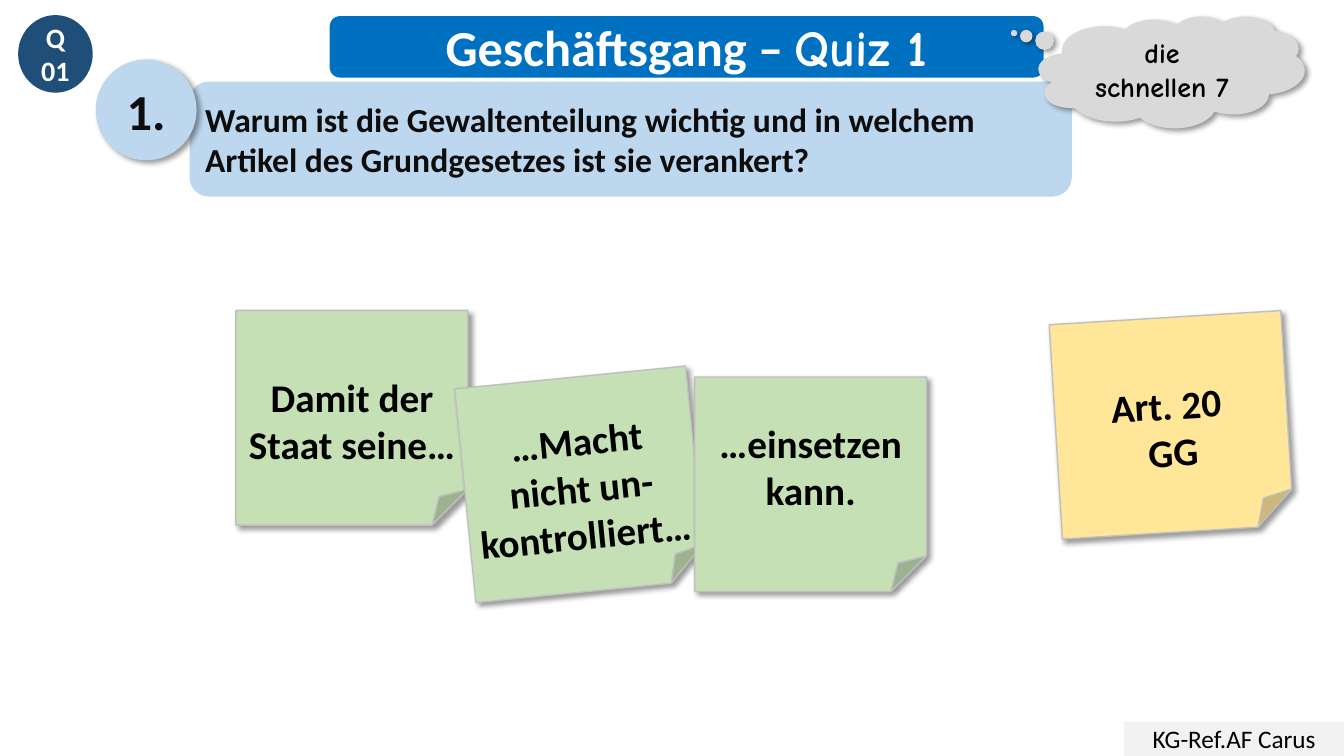
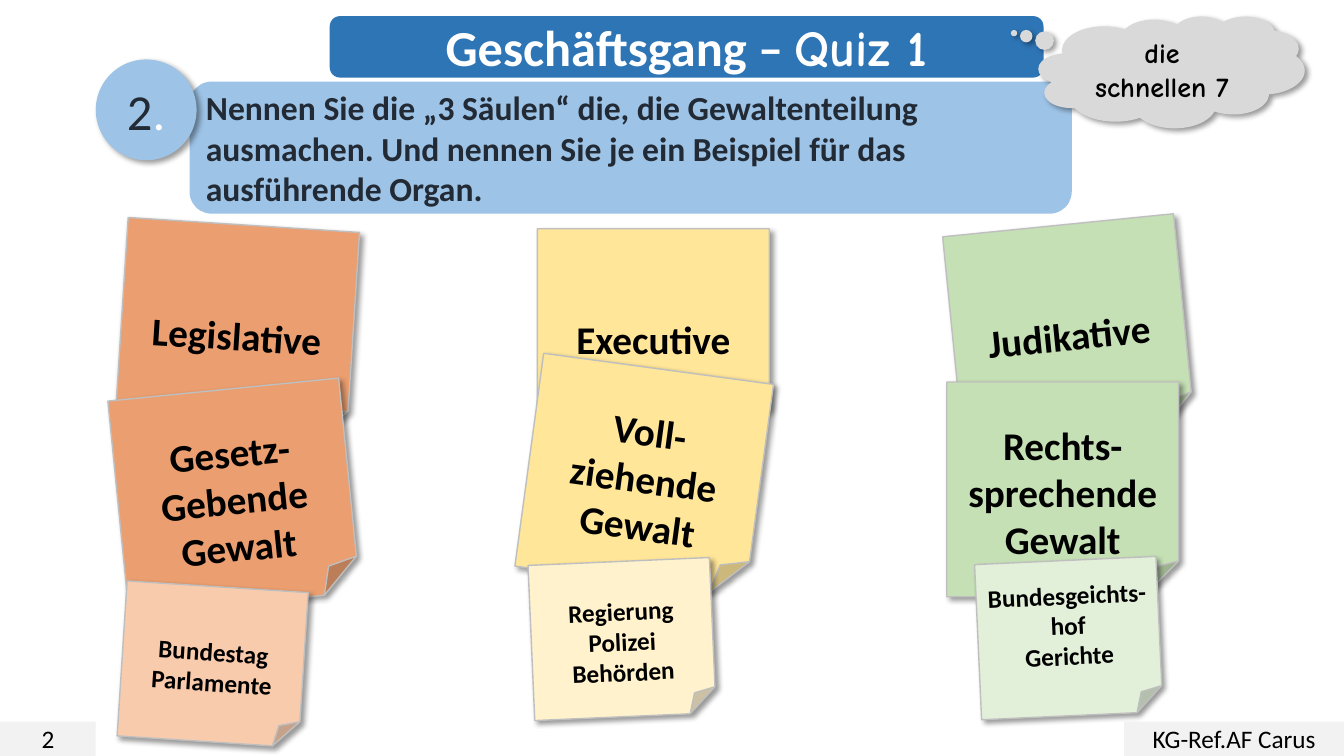
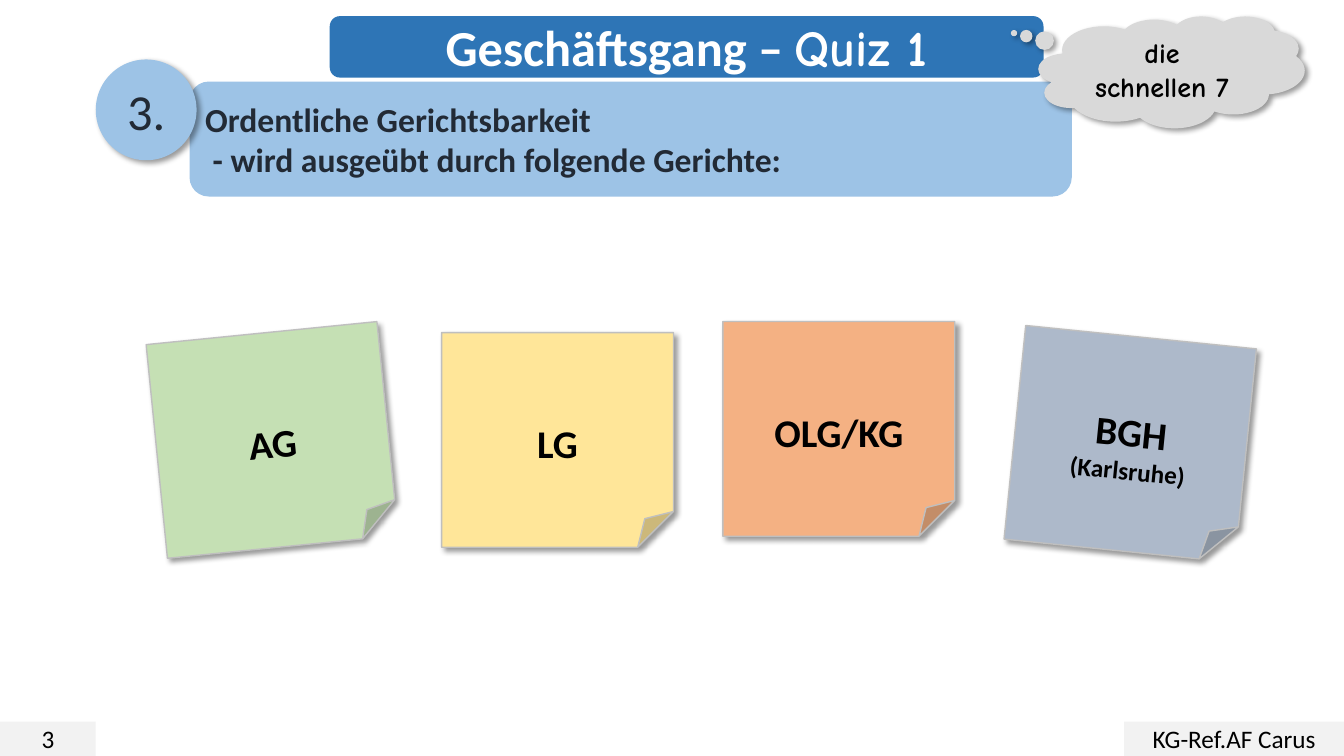
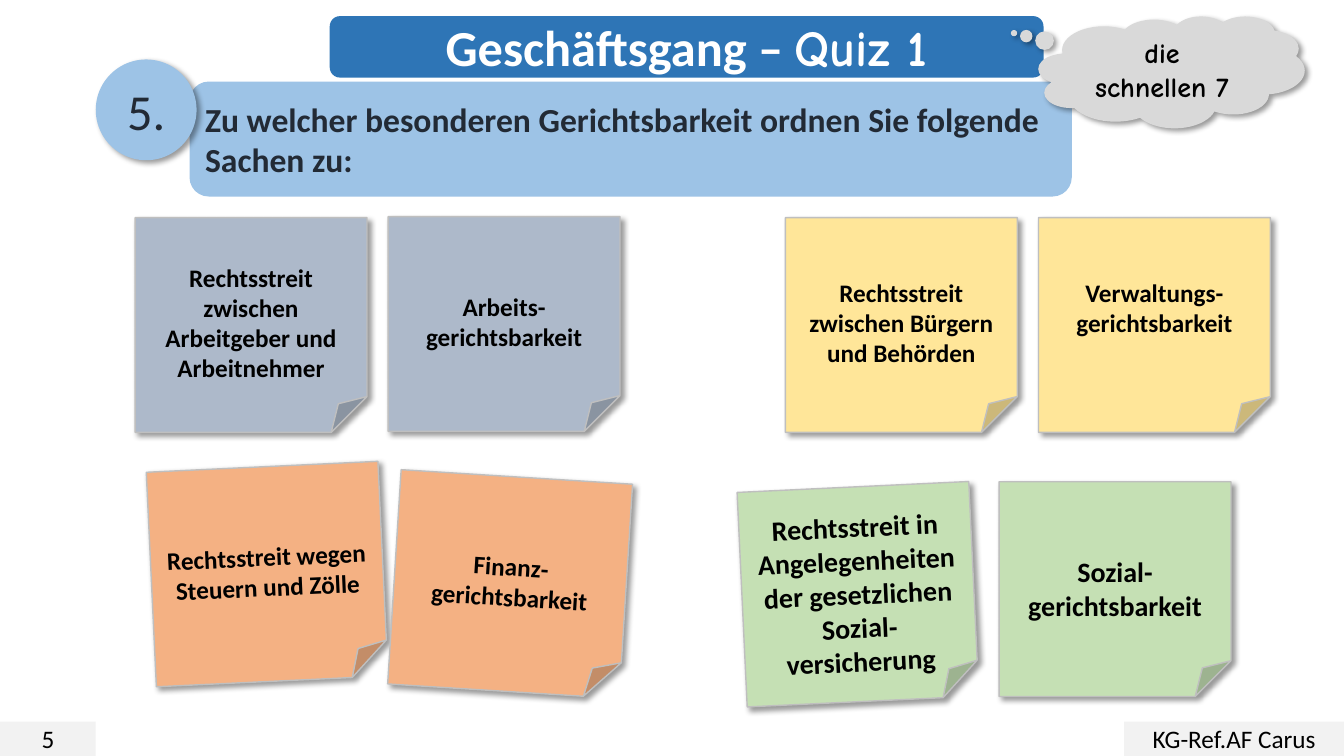
import lxml.etree
import pptx
import pptx.dml.color
import pptx.enum.shapes
import pptx.enum.text
import pptx.oxml.ns
import pptx.util

Inches = pptx.util.Inches
KIND = pptx.enum.shapes.MSO_SHAPE
ALIGN = pptx.enum.text.PP_ALIGN
qn = pptx.oxml.ns.qn

HEX = {
    "white": "FFFFFF", "black": "000000", "ink": "0D0D0D", "slate": "222A35",
    "bright": "0070C0", "blue": "2E75B6", "navy": "1F4E79",
    "ice": "BDD7EE", "sky": "9DC3E6", "mist": "F2F2F2", "cloud": "D9D9D9",
    "edge": "BFBFBF", "green": "C5E0B4", "pale": "E2F0D9", "gold": "FFE699",
    "cream": "FFF2CC", "rust": "EB9E6F", "peach": "F8CBAD",
    "orange": "F4B183", "steel": "ADB9CA",
}
BIG = (2.3, 2.13)
SMALL = (1.8, 1.54)


def color(name):
    return pptx.dml.color.RGBColor.from_string(HEX[name])


def text(shape, body, align=ALIGN.CENTER, top=0.05, **base):
    frame = shape.text_frame
    frame.word_wrap = True
    frame.margin_top = Inches(top)
    frame.vertical_anchor = pptx.enum.text.MSO_ANCHOR.MIDDLE
    para = frame.paragraphs[0]
    para.alignment = align
    for part, own in [(body, {})] if isinstance(body, str) else body:
        look = {"size": 18, "font": "Calibri", "ink": "black", "bold": False, **base, **own}
        for i, line in enumerate(part.split("\n")):
            if i:
                para = frame.add_paragraph()
                para.alignment = align
            if line:
                run = para.add_run()
                run.text = line
                run.font.size = pptx.util.Pt(look["size"])
                run.font.name = look["font"]
                run.font.bold = look["bold"]
                run.font.color.rgb = color(look["ink"])


def shade(shape):
    effects = shape._element.spPr.find(qn("a:effectLst"))
    outer = lxml.etree.SubElement(
        effects, qn("a:outerShdw"), blurRad=str(pptx.util.Pt(4)),
        dist=str(pptx.util.Pt(3)), dir=str(45 * 60000), algn="tl", rotWithShape="0")
    tint = lxml.etree.SubElement(outer, qn("a:srgbClr"), val=HEX["black"])
    lxml.etree.SubElement(tint, qn("a:alpha"), val="40000")


def block(shapes, kind, box, fill, edge=None, shadow=False):
    shape = shapes.add_shape(kind, *(Inches(n) for n in box))
    shape.shadow.inherit = False
    shape.fill.solid()
    shape.fill.fore_color.rgb = color(fill)
    if edge:
        shape.line.color.rgb = color(edge)
        shape.line.width = pptx.util.Pt(1)
    else:
        shape.line.fill.background()
    if shadow:
        shade(shape)
    return shape


def title(slide, fill):
    bar = block(slide.shapes, KIND.ROUNDED_RECTANGLE, (3.27, 0.16, 7.08, 0.61), fill)
    text(bar, [("Geschäftsgang – ", {}), ("Quiz 1", {"font": "Comic Neue"})],
         size=36, ink="white", bold=True)


def footer(slide, page):
    if page:
        text(block(slide.shapes, KIND.RECTANGLE, (0, 7.16, 0.95, 0.34), "mist"), page)
    text(block(slide.shapes, KIND.RECTANGLE, (11.15, 7.16, 2.18, 0.34), "mist"), "KG-Ref.AF Carus")


def ask(slide, label, body, fill, ink, bold=False, high=1.14):
    left, top = 0.95, 0.59
    panel = block(slide.shapes, KIND.ROUNDED_RECTANGLE, (left + 0.93, top + 0.22, 8.75, high), fill)
    text(panel, body, align=ALIGN.LEFT, size=24, ink=ink, bold=True)
    disc = block(slide.shapes, KIND.OVAL, (left, top, 1, 1), fill, shadow=True)
    text(disc, label, size=36, ink=ink, bold=bold)


def bubble(slide):
    shape = block(slide.shapes, KIND.CLOUD_CALLOUT, (10.3, 0.16, 2.64, 1.11), "cloud", shadow=True)
    shape.adjustments[0] = -0.592
    shape.adjustments[1] = -0.348
    text(shape, "die schnellen 7", size=20, font="Comic Neue", bold=True)


def note(slide, left, top, fill, body, turn=0, size=28, drop=24, area=BIG):
    shape = block(slide.shapes, KIND.FOLDED_CORNER, (left, top, *area), fill, "edge", True)
    shape.rotation = turn % 360
    text(shape, body, top=round(0.05 + drop * 1.22 / 72, 2), size=size, bold=True)


def quiz(deck, page, label, body, notes, bar="blue", fill="sky", ink="slate", **look):
    slide = deck.slides.add_slide(deck.slide_layouts[6])
    title(slide, bar)
    footer(slide, page)
    ask(slide, label, body, fill, ink, **look)
    bubble(slide)
    for left, top, tint, words, extra in notes:
        note(slide, left, top, tint, words, **extra)
    return slide


def main():
    deck = pptx.Presentation()
    deck.slide_width, deck.slide_height = Inches(13.33), Inches(7.5)

    first = quiz(deck, None, "1.",
                 "Warum ist die Gewaltenteilung wichtig und in welchem Artikel des Grundgesetzes ist sie verankert?",
                 [
                     (2.34, 3.08, "green", "Damit der Staat seine…", {}),
                     (4.61, 3.74, "green", "…Macht nicht un-kontrolliert…", {"turn": -5.67}),
                     (6.89, 3.74, "green", "…einsetzen kann.", {"drop": 0}),
                     (10.47, 3.15, "gold", "Art. 20 \nGG", {"turn": -3.5}),
                 ], bar="bright", fill="ice", ink="ink", bold=True)
    badge = block(first.shapes, KIND.OVAL, (0.18, 0.15, 0.74, 0.77), "navy")
    text(badge, "Q01", size=20, ink="white", bold=True)

    tag = {"size": 18, "drop": 18, "area": SMALL}
    quiz(deck, "2", [("2", {}), (".", {"ink": "white"})],
         "Nennen Sie die „3 Säulen“ die, die Gewaltenteilung ausmachen. "
         "Und nennen Sie je ein Beispiel für das ausführende Organ.",
         [
             (9.45, 2.23, "green", "Judikative", {"turn": -5.7}),
             (9.39, 3.79, "green", "Rechts-sprechende Gewalt", {}),
             (5.33, 2.27, "gold", "Executive", {}),
             (5.24, 3.65, "gold", "Voll-\nziehende\nGewalt", {"turn": 7.7}),
             (1.2, 2.23, "rust", "Legislative", {"turn": 3.7}),
             (1.17, 3.86, "rust", "Gesetz-\nGebende\nGewalt", {"turn": -5.7}),
             (1.21, 5.82, "peach", "Bundestag\nParlamente", {**tag, "turn": 3.7}),
             (5.27, 5.57, "cream", "Regierung\nPolizei\nBehörden", {**tag, "turn": -2.5}),
             (9.7, 5.56, "pale", "Bundesgeichts-hof\nGerichte", {**tag, "turn": -2.6, "drop": 0}),
         ], high=1.31)

    quiz(deck, "3", "3.",
         "Ordentliche Gerichtsbarkeit\n - wird ausgeübt durch folgende Gerichte:",
         [
             (1.55, 3.3, "green", "AG", {"turn": -5.7}),
             (4.38, 3.3, "gold", "LG", {}),
             (7.17, 3.19, "orange", "OLG/KG", {}),
             (10.06, 3.34, "steel", [("BGH\n", {}), ("(Karlsruhe)", {"size": 18})], {"turn": 5.8}),
         ])

    case = {"size": 18, "drop": 18}
    wide = {"size": 20, "drop": 20}
    quiz(deck, "5", "5.",
         "Zu welcher besonderen Gerichtsbarkeit ordnen Sie folgende Sachen zu:",
         [
             (1.34, 2.16, "steel", "Rechtsstreit zwischen\nArbeitgeber und Arbeitnehmer", case),
             (7.79, 2.16, "gold", "Rechtsstreit zwischen Bürgern und Behörden", case),
             (1.5, 4.63, "orange", "Rechtsstreit wegen Steuern und Zölle", {**case, "turn": -2.7}),
             (7.36, 4.83, "green",
              "Rechtsstreit in Angelegenheiten der gesetzlichen Sozial-versicherung",
              {**wide, "turn": -2.7}),
             (3.85, 2.15, "steel", "Arbeits-gerichtsbarkeit", case),
             (10.3, 2.16, "gold", "Verwaltungs-gerichtsbarkeit", {**case, "drop": 0}),
             (3.91, 4.73, "orange", "Finanz-gerichtsbarkeit", {**case, "turn": 3.6}),
             (9.91, 4.78, "green", "Sozial-gerichtsbarkeit", wide),
         ])
    deck.save("out.pptx")


if __name__ == "__main__":
    main()
